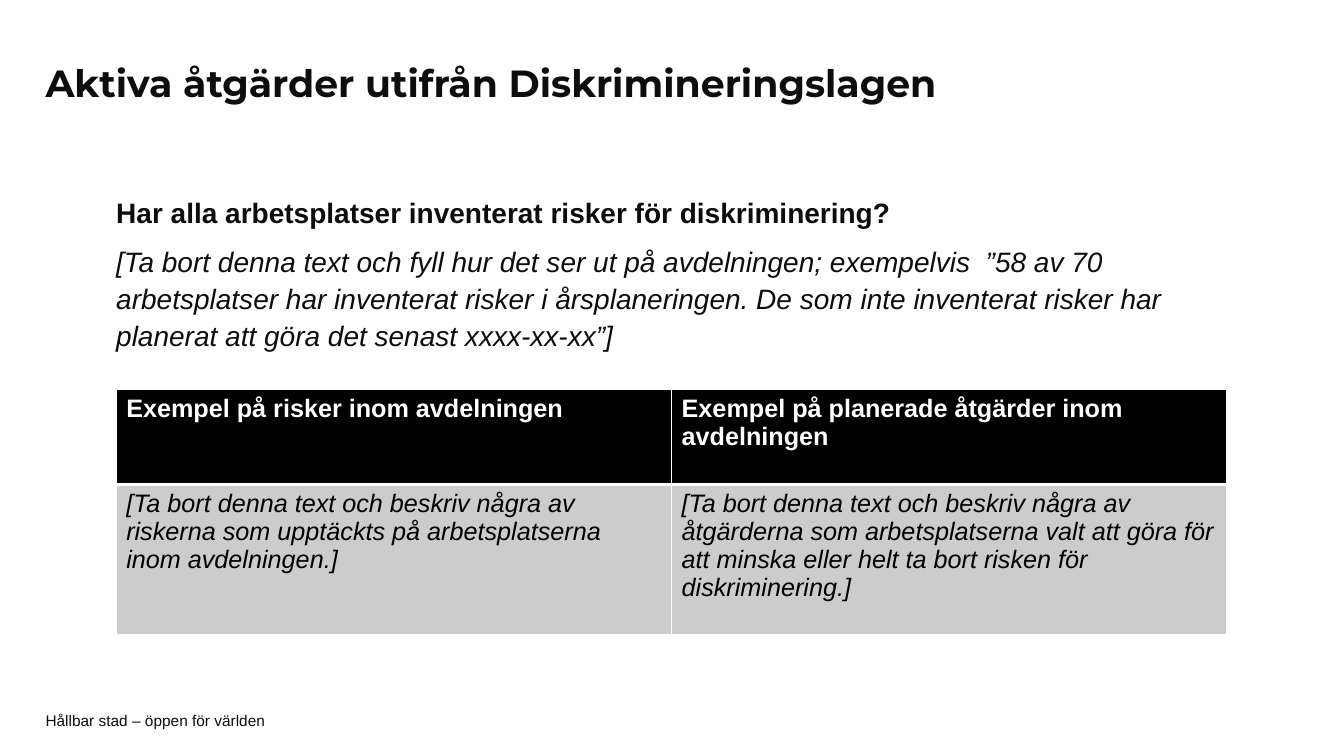
import lxml.etree
import pptx
import pptx.dml.color
import pptx.enum.text
import pptx.oxml.ns
import pptx.util

Pt = pptx.util.Pt
ANCHOR = pptx.enum.text.MSO_ANCHOR
INK = "0D0D0D"
WHITE = "FFFFFF"
BLACK = "000000"
GREY = "CCCCCC"


def colour(value):
    """Turn a hex string into a colour."""
    return pptx.dml.color.RGBColor.from_string(value)


def add_element(parent, tag, position=None, **attributes):
    """Add a drawing element to a parent, last or at a position."""
    element = lxml.etree.Element(pptx.oxml.ns.qn(tag), attributes)
    parent.insert(len(parent) if position is None else position, element)
    return element


def write_text(para, text, size=18, font="Arial", ink=INK, bold=False, italic=False,
               before=0, after=0, spacing=1.0):
    """Fill a paragraph with plain left-aligned text in one format."""
    properties = para._p.get_or_add_pPr()
    properties.set("marL", "0")
    properties.set("indent", "0")
    add_element(properties, "a:buNone")
    para.alignment = pptx.enum.text.PP_ALIGN.LEFT
    para.space_before = Pt(before)
    para.space_after = Pt(after)
    para.line_spacing = spacing
    span = para.add_run()
    span.text = text
    span.font.size = Pt(size)
    span.font.name = font
    span.font.bold = bold
    span.font.italic = italic
    span.font.color.rgb = colour(ink)


def set_frame(box, left, top, width, height, anchor=ANCHOR.TOP, inset=0):
    """Place a box and prepare its text frame."""
    box.left, box.top, box.width, box.height = Pt(left), Pt(top), Pt(width), Pt(height)
    frame = box.text_frame
    frame.word_wrap = True
    frame.auto_size = pptx.enum.text.MSO_AUTO_SIZE.NONE
    frame.vertical_anchor = anchor
    frame.margin_left = frame.margin_right = 0
    frame.margin_top = frame.margin_bottom = Pt(inset)
    return frame


def set_borders(cell, bottom):
    """Draw white borders round a cell, with its own bottom width."""
    widths = {"a:lnL": 1, "a:lnR": 1, "a:lnT": 1, "a:lnB": bottom}
    for position, (tag, width) in enumerate(widths.items()):
        line = add_element(cell._tc.get_or_add_tcPr(), tag, position, w=str(Pt(width)))
        add_element(add_element(line, "a:solidFill"), "a:srgbClr", val=WHITE)


def add_risk_table(slide, rows, heights):
    """Add the table with a black header row and grey body rows."""
    frame = slide.shapes.add_table(len(rows), len(rows[0]), Pt(83), Pt(278), Pt(793.5), Pt(sum(heights)))
    table = frame.table
    for index, (texts, height) in enumerate(zip(rows, heights)):
        header = index == 0
        table.rows[index].height = Pt(height)
        for cell, text in zip(table.rows[index].cells, texts):
            cell.fill.solid()
            cell.fill.fore_color.rgb = colour(BLACK if header else GREY)
            set_borders(cell, 3 if header else 1)
            write_text(cell.text_frame.paragraphs[0], text, ink=WHITE if header else BLACK,
                       bold=header, italic=not header)


def main():
    """Build and save the slide."""
    deck = pptx.Presentation()
    deck.slide_width, deck.slide_height = Pt(960), Pt(540)
    slide = deck.slides.add_slide(deck.slide_layouts[1])

    footer = slide.shapes.add_textbox(0, 0, 0, 0)
    frame = set_frame(footer, 32.5, 508.5, 680, 11.5, ANCHOR.MIDDLE)
    write_text(frame.paragraphs[0], "Hållbar stad – öppen för världen", size=11)

    frame = set_frame(slide.shapes.title, 32.5, 31.5, 722, 58.5, ANCHOR.MIDDLE, 3.6)
    write_text(frame.paragraphs[0], "Aktiva åtgärder utifrån Diskrimineringslagen",
               size=27, font="Montserrat", bold=True, spacing=0.9)

    frame = set_frame(slide.placeholders[1], 83, 137, 793.5, 124.5)
    write_text(frame.paragraphs[0], "Har alla arbetsplatser inventerat risker för diskriminering?",
               size=20, bold=True, after=3, spacing=1.1)
    write_text(frame.add_paragraph(),
               "[Ta bort denna text och fyll hur det ser ut på avdelningen; exempelvis  ”58 av 70 "
               "arbetsplatser har inventerat risker i årsplaneringen. De som inte inventerat risker "
               "har planerat att göra det senast xxxx-xx-xx”]",
               size=20, italic=True, before=6, after=3, spacing=1.1)

    add_risk_table(slide, [
        ("Exempel på risker inom avdelningen",
         "Exempel på planerade åtgärder inom avdelningen"),
        ("[Ta bort denna text och beskriv några av riskerna som upptäckts på "
         "arbetsplatserna inom avdelningen.]",
         "[Ta bort denna text och beskriv några av åtgärderna som arbetsplatserna valt att "
         "göra för att minska eller helt ta bort risken för diskriminering.]"),
    ], heights=(68, 107))

    deck.save("out.pptx")


if __name__ == "__main__":
    main()
